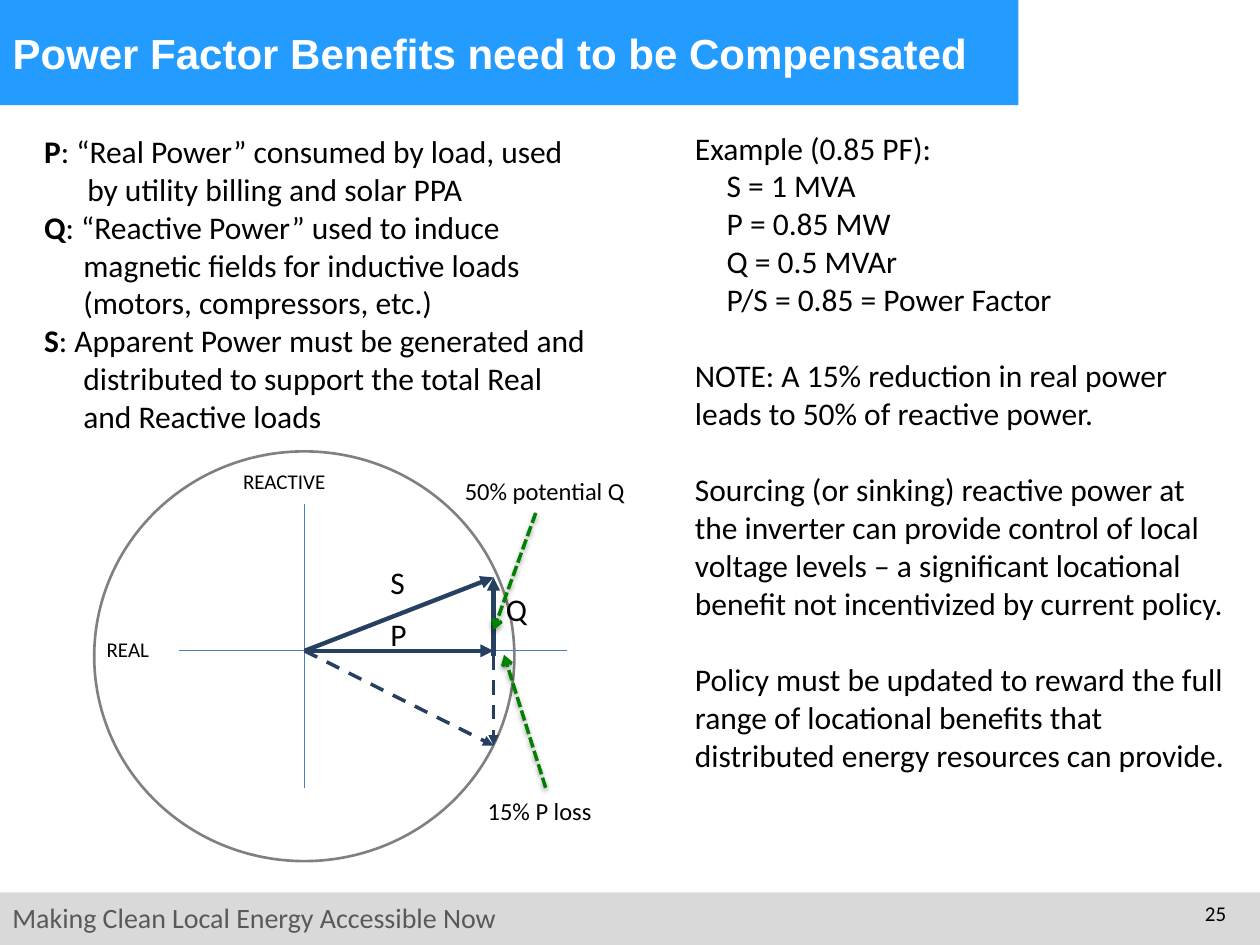
from lxml.etree import SubElement
from pptx import Presentation
from pptx.dml.color import RGBColor
from pptx.enum.dml import MSO_LINE_DASH_STYLE as Dash
from pptx.enum.shapes import MSO_CONNECTOR as Conn, MSO_SHAPE as Shape
from pptx.enum.text import MSO_ANCHOR as Anchor, MSO_AUTO_SIZE as AutoSize, PP_ALIGN as Align
from pptx.oxml.ns import qn
from pptx.util import Cm, Pt

COLORS = {
    "banner": "249CFF", "footer": "D9D9D9", "footer_text": "595959",
    "axis": "4B7EBC", "circle": "808080", "vector": "254061",
    "callout": "008000", "text": "000000", "white": "FFFFFF",
}

DEFINITIONS = [
    ("P", ": “Real Power” consumed by load, used by utility billing and solar PPA", 0.87),
    ("Q", ": “Reactive Power” used to induce magnetic fields for inductive loads "
          "(motors, compressors, etc.)", 0.79),
    ("S", ": Apparent Power must be generated and distributed to support the total "
          "Real and Reactive loads", 0.79),
]
EXAMPLE = ["S = 1 MVA", "P = 0.85 MW", "Q = 0.5 MVAr", "P/S = 0.85 = Power Factor"]
NOTES = [
    "NOTE: A 15% reduction in real power leads to 50% of reactive power.",
    "Sourcing (or sinking) reactive power at the inverter can provide control of local "
    "voltage levels – a significant locational benefit not incentivized by current policy.",
    "Policy must be updated to reward the full range of locational benefits that "
    "distributed energy resources can provide.",
]


def rgb(name):
    return RGBColor.from_string(COLORS[name])


def add_run(p, text, size=18, color="text", bold=False, font="Calibri"):
    r = p.add_run()
    r.text = text
    r.font.name, r.font.size, r.font.bold = font, Pt(size), bold
    r.font.color.rgb = rgb(color)


def add_frame(s, left, top, width, height, wrap=True):
    tf = s.shapes.add_textbox(Cm(left), Cm(top), Cm(width), Cm(height)).text_frame
    tf.word_wrap = wrap
    return tf


def add_label(s, text, left, top, width, height, wrap=True, align=Align.LEFT, **fmt):
    p = add_frame(s, left, top, width, height, wrap).paragraphs[0]
    p.alignment = align
    add_run(p, text, **fmt)


def add_para(tf, margin=0, indent=0, before=0):
    first = tf.paragraphs[0]
    p = tf.add_paragraph() if first.runs else first
    pPr = p._p.get_or_add_pPr()
    pPr.set("marL", str(Cm(margin)))
    pPr.set("indent", str(Cm(indent)))
    p.space_before = Pt(before)
    return p


def add_block(s, kind, left, top, width, height, fill=None, line=None):
    sp = s.shapes.add_shape(kind, Cm(left), Cm(top), Cm(width), Cm(height))
    sp.shadow.inherit = False
    if fill:
        sp.fill.solid()
        sp.fill.fore_color.rgb = rgb(fill)
    else:
        sp.fill.background()
    if line:
        sp.line.color.rgb = rgb(line)
        sp.line.width = Pt(1.5)
    else:
        sp.line.fill.background()


def add_line(s, start, end, color, width, dash=None, head=None, shadow=False):
    c = s.shapes.add_connector(Conn.STRAIGHT, *map(Cm, start + end))
    c.line.color.rgb = rgb(color)
    c.line.width = Pt(width)
    if dash:
        c.line.dash_style = dash
    if head:
        SubElement(c.line._get_or_add_ln(), qn("a:tailEnd"), type=head)
    effects = SubElement(c._element.spPr, qn("a:effectLst"))
    if shadow:
        outer = SubElement(effects, qn("a:outerShdw"), blurRad=str(Pt(3.1)),
                           dist=str(Pt(1.6)), dir="5400000", rotWithShape="0")
        black = SubElement(outer, qn("a:srgbClr"), val=COLORS["text"])
        SubElement(black, qn("a:alpha"), val="38000")


def add_title(s, text):
    add_block(s, Shape.RECTANGLE, 0, 0, 20.53, 2.12, fill="banner")
    title = s.shapes.title
    title.left, title.top, title.width, title.height = Cm(0), Cm(0), Cm(20.32), Cm(2.12)
    title.element.getparent().append(title.element)
    tf = title.text_frame
    tf.auto_size, tf.word_wrap, tf.vertical_anchor = AutoSize.NONE, True, Anchor.MIDDLE
    p = tf.paragraphs[0]
    p.alignment = Align.LEFT
    add_run(p, text, size=24, color="white", bold=True, font="Arial")


def add_footer(s):
    add_block(s, Shape.RECTANGLE, 0, 17.99, 25.4, 1.06, fill="footer")
    add_label(s, "Making Clean Local Energy Accessible Now", 0, 18.03, 13.12, 0.94,
              size=16, color="footer_text")
    add_label(s, "25", 23.7, 18.03, 1.27, 1.02, align=Align.RIGHT, size=12)


def add_definitions(s):
    tf = add_frame(s, 0.64, 2.54, 11.64, 7.18)
    for term, meaning, hang in DEFINITIONS:
        p = add_para(tf, hang, -hang)
        add_run(p, term, bold=True)
        add_run(p, meaning)


def add_example(s):
    tf = add_frame(s, 13.76, 2.47, 11.22, 14.86)
    add_run(add_para(tf), "Example (0.85 PF):")
    for text in EXAMPLE:
        add_run(add_para(tf, margin=0.64), text)
    for text in NOTES:
        add_run(add_para(tf, before=22), text)


def add_diagram(s):
    origin, real_tip = (6.14, 13.12), (9.95, 13.12)
    upper, lower, base = (9.95, 11.64), (9.95, 15.03), (9.95, 13.22)

    add_line(s, (6.14, 10.16), (6.14, 15.88), "axis", 0.75)
    add_line(s, (11.43, 13.12), (3.6, 13.12), "axis", 0.75)
    add_block(s, Shape.OVAL, 1.9, 9.1, 8.47, 8.26, line="circle")

    for start, end in [(origin, real_tip), (origin, upper), (base, upper)]:
        add_line(s, start, end, "vector", 2.5, head="triangle")
    for start in (origin, base):
        add_line(s, start, lower, "vector", 2, Dash.DASH, "triangle")
    for start, end in [((11, 15.88), (10.16, 13.2)), ((10.8, 10.34), (9.95, 12.7))]:
        add_line(s, start, end, "callout", 2, Dash.SQUARE_DOT, "arrow", shadow=True)

    for text, left, top in [("P", 7.62, 12.27), ("Q", 9.95, 11.76), ("S", 7.62, 11.23)]:
        add_label(s, text, left, top, 1.06, 1.02)
    for text, left, top in [("REACTIVE", 4.65, 9.32), ("REAL", 1.9, 12.7)]:
        add_label(s, text, left, top, 2.96, 0.76, size=12)
    add_label(s, "15% P loss", 9.58, 15.93, 3, 0.86, wrap=False, size=14)
    add_label(s, "50% potential Q", 9.12, 9.47, 4.06, 0.86, wrap=False, size=14)


def main():
    prs = Presentation()
    prs.slide_width, prs.slide_height = Cm(25.4), Cm(19.05)
    s = prs.slides.add_slide(prs.slide_layouts[5])
    add_footer(s)
    add_title(s, "Power Factor Benefits need to be Compensated")
    add_diagram(s)
    add_example(s)
    add_definitions(s)
    prs.save("out.pptx")


if __name__ == "__main__":
    main()
